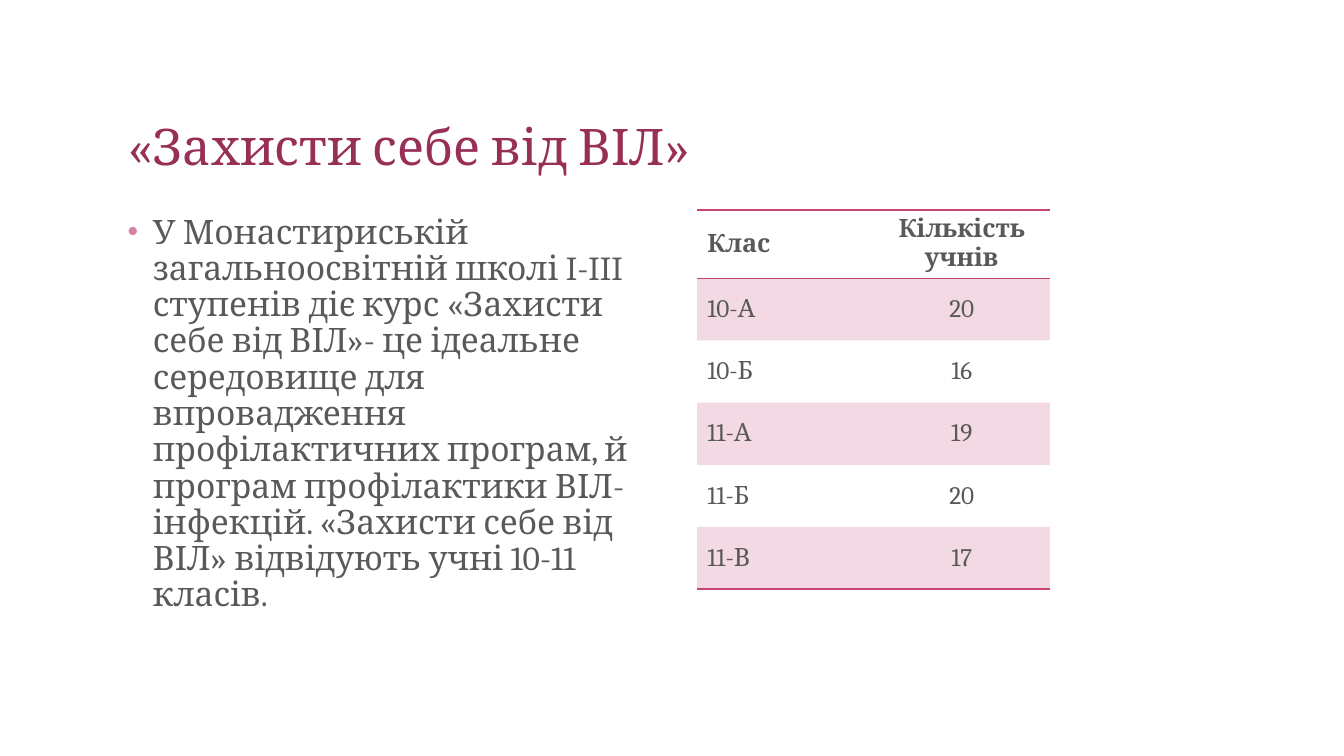
from dataclasses import dataclass

from lxml.etree import SubElement
from pptx import Presentation
from pptx.dml.color import RGBColor
from pptx.enum.text import MSO_ANCHOR, MSO_AUTO_SIZE, PP_ALIGN
from pptx.oxml.ns import qn
from pptx.util import Inches, Pt

COLORS = {
    "title": "972F57",
    "text": "595959",
    "bullet": "D680A5",
    "accent": "C44475",
}
FONT = "Cambria"
COLUMNS, ROWS = 160, 90
SLIDE_WIDTH, SLIDE_HEIGHT = Inches(13.33), Inches(7.5)
NO_STYLE = "{2D5ABB26-0587-4C30-8999-92F81FD0307C}"
BAND_ALPHA = 20


@dataclass(frozen=True)
class Area:
    column: float
    row: float
    width: float
    height: float

    def lengths(self) -> tuple[int, int, int, int]:
        return (
            across(self.column),
            down(self.row),
            across(self.width),
            down(self.height),
        )


@dataclass(frozen=True)
class TextStyle:
    size: int
    color: str
    bold: bool = False


@dataclass(frozen=True)
class ClassCount:
    name: str
    students: str


TITLE_AREA = Area(14, 6, 132, 15.6)
BODY_AREA = Area(14, 25, 63, 56)
TABLE_AREA = Area(83, 25, 42, 44.4)

TITLE_STYLE = TextStyle(36, "title")
BODY_STYLE = TextStyle(24, "text")
HEADER_STYLE = TextStyle(18, "text", True)
CELL_STYLE = TextStyle(18, "text")

TITLE = "«Захисти себе від ВІЛ»"
BODY = (
    "У Монастириській загальноосвітній школі I-III ступенів діє курс "
    "«Захисти себе від ВІЛ»- це ідеальне середовище для впровадження "
    "профілактичних програм, й програм профілактики ВІЛ-інфекцій. "
    "«Захисти себе від ВІЛ» відвідують учні 10-11 класів."
)
CLASS_COUNTS = [
    ClassCount("Клас", "Кількість учнів"),
    ClassCount("10-А", "20"),
    ClassCount("10-Б", "16"),
    ClassCount("11-А", "19"),
    ClassCount("11-Б", "20"),
    ClassCount("11-В", "17"),
]


def across(columns: float) -> int:
    return round(SLIDE_WIDTH * columns / COLUMNS)


def down(rows: float) -> int:
    return round(SLIDE_HEIGHT * rows / ROWS)


def add_span(para, text: str, style: TextStyle) -> None:
    span = para.add_run()
    span.text = text
    span.font.name = FONT
    span.font.size = Pt(style.size)
    span.font.bold = style.bold
    span.font.color.rgb = RGBColor.from_string(COLORS[style.color])


def add_bullet(para) -> None:
    properties = para._p.get_or_add_pPr()
    properties.set("marL", str(Inches(0.25)))
    properties.set("indent", str(-Inches(0.25)))
    color = SubElement(properties, qn("a:buClr"))
    SubElement(color, qn("a:srgbClr"), val=COLORS["bullet"])
    SubElement(properties, qn("a:buSzPct"), val="90000")
    SubElement(properties, qn("a:buFont"), typeface="Arial")
    SubElement(properties, qn("a:buChar"), char="•")


def fill_placeholder(
    box, area: Area, text: str, style: TextStyle, anchor: MSO_ANCHOR, bulleted: bool
) -> None:
    box.left, box.top, box.width, box.height = area.lengths()
    frame = box.text_frame
    frame.word_wrap = True
    frame.auto_size = MSO_AUTO_SIZE.NONE
    frame.vertical_anchor = anchor
    para = frame.paragraphs[0]
    if bulleted:
        add_bullet(para)
    para.alignment = PP_ALIGN.LEFT
    para.line_spacing = 0.9
    para.space_before = Pt(0)
    add_span(para, text, style)


def add_border(cell, side: str) -> None:
    line = SubElement(cell._tc.get_or_add_tcPr(), qn(f"a:ln{side}"), w=str(Pt(1)))
    fill = SubElement(line, qn("a:solidFill"))
    SubElement(fill, qn("a:srgbClr"), val=COLORS["accent"])


def paint_cell(cell, banded: bool) -> None:
    if not banded:
        cell.fill.background()
        return
    cell.fill.solid()
    cell.fill.fore_color.rgb = RGBColor.from_string(COLORS["accent"])
    color = cell._tc.tcPr.find(qn("a:solidFill")).find(qn("a:srgbClr"))
    SubElement(color, qn("a:alpha"), val=str(BAND_ALPHA * 1000))


def add_class_table(page, area: Area, counts: list[ClassCount]) -> None:
    table = page.shapes.add_table(len(counts), 2, *area.lengths()).table
    table.first_row = False
    table.horz_banding = False
    table._tbl.tblPr.find(qn("a:tableStyleId")).text = NO_STYLE
    last = len(counts) - 1
    for row, count in enumerate(counts):
        style = CELL_STYLE if row else HEADER_STYLE
        entries = [(count.name, PP_ALIGN.LEFT), (count.students, PP_ALIGN.CENTER)]
        for column, (text, alignment) in enumerate(entries):
            cell = table.cell(row, column)
            cell.vertical_anchor = MSO_ANCHOR.MIDDLE
            if row == 0:
                add_border(cell, "T")
            if row in (0, last):
                add_border(cell, "B")
            paint_cell(cell, row % 2 == 1)
            para = cell.text_frame.paragraphs[0]
            para.alignment = alignment
            add_span(para, text, style)


def main() -> None:
    deck = Presentation()
    deck.slide_width, deck.slide_height = SLIDE_WIDTH, SLIDE_HEIGHT
    page = deck.slides.add_slide(deck.slide_layouts[1])
    title, body = page.placeholders
    fill_placeholder(title, TITLE_AREA, TITLE, TITLE_STYLE, MSO_ANCHOR.BOTTOM, False)
    fill_placeholder(body, BODY_AREA, BODY, BODY_STYLE, MSO_ANCHOR.TOP, True)
    add_class_table(page, TABLE_AREA, CLASS_COUNTS)
    deck.save("out.pptx")


if __name__ == "__main__":
    main()
